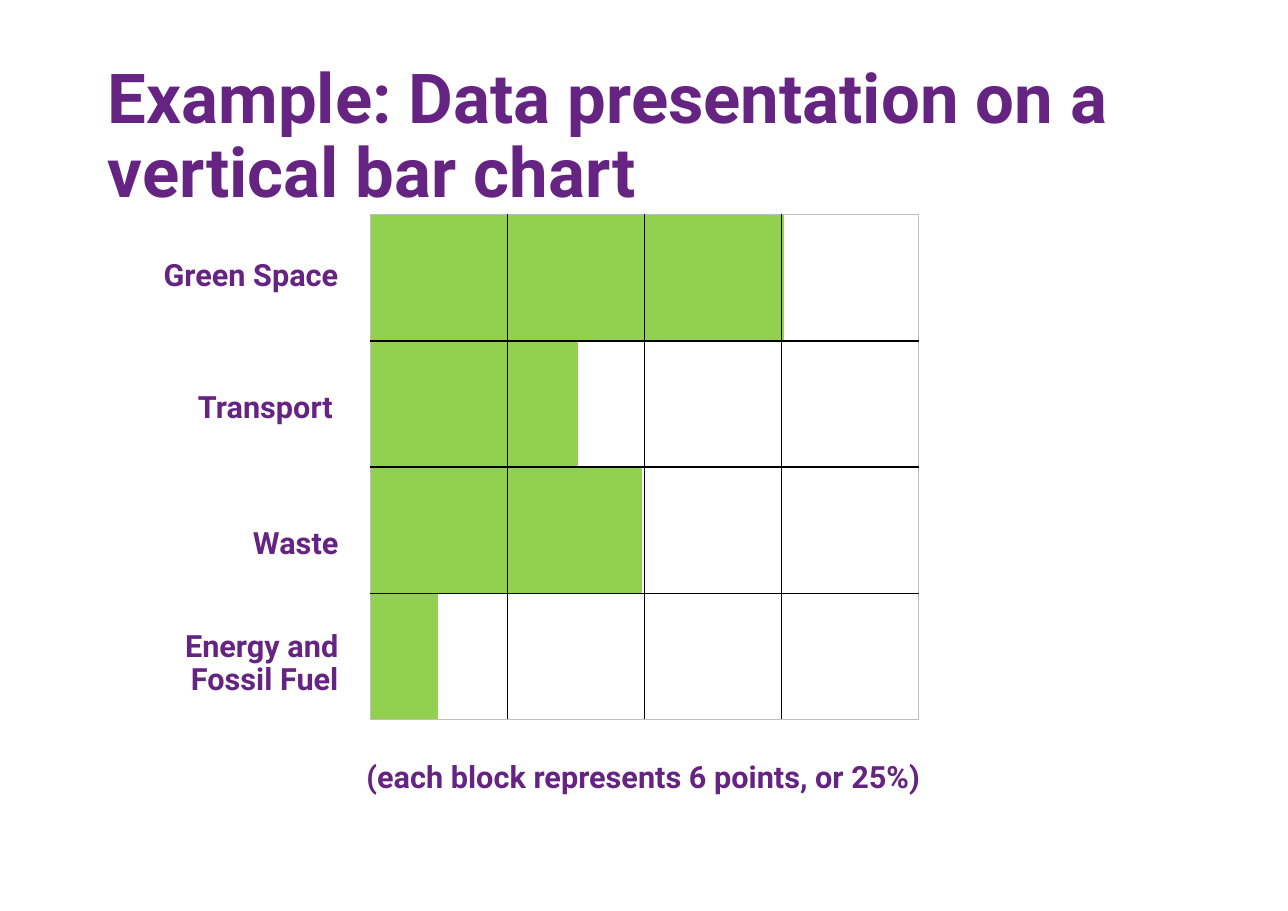
from lxml.etree import SubElement
from pptx import Presentation
from pptx.dml.color import RGBColor
from pptx.enum.shapes import MSO_SHAPE as Shape
from pptx.enum.text import MSO_ANCHOR as Anchor, PP_ALIGN as Align
from pptx.oxml.ns import qn
from pptx.util import Inches, Pt

COLORS = {"purple": "662482", "green": "92D050", "grid": "000000", "frame": "BFBFBF"}
FONT = "Roboto"
GRID_LEFT, GRID_TOP = 3.36, 1.95
BLOCK_WIDTH, ROW_HEIGHT, BLOCKS = 1.245, 1.145, 4
CATEGORIES = [
    ("Green Space", 3.74, (1.28, 2.27, 1.89, 0.44)),
    ("Transport", 1.87, (1.27, 3.47, 1.85, 0.44)),
    ("Waste", 2.45, (1.28, 4.7, 1.89, 0.44)),
    ("Energy and Fossil Fuel", 0.6, (1.28, 5.94, 1.89, 0.44)),
]


def color(name):
    """Return a palette colour."""
    return RGBColor.from_string(COLORS[name])


def write_text(box, text, size, align):
    """Write one bold purple paragraph that rests on the bottom of a box."""
    frame = box.text_frame
    frame.word_wrap = True
    frame.vertical_anchor = Anchor.BOTTOM
    para = frame.paragraphs[0]
    para.alignment = align
    para.line_spacing = 0.9
    para.space_before = Pt(0)
    span = para.add_run()
    span.text = text
    span.font.name = FONT
    span.font.size = Pt(size)
    span.font.bold = True
    span.font.color.rgb = color("purple")


def add_title(page, text):
    """Place and fill the title placeholder."""
    title = page.shapes.title
    title.left, title.top = Inches(0.88), Inches(1.06)
    title.width, title.height = Inches(9.94), Inches(0.92)
    write_text(title, text, 45, Align.LEFT)


def add_label(page, text, place, align):
    """Add a 20 point label."""
    box = page.shapes.add_textbox(*map(Inches, place))
    write_text(box, text, 20, align)


def add_bar(page, row, width):
    """Add the green bar of one row."""
    top = GRID_TOP + row * ROW_HEIGHT
    place = map(Inches, (GRID_LEFT + 0.01, top, width, ROW_HEIGHT))
    bar = page.shapes.add_shape(Shape.RECTANGLE, *place)
    bar.shadow.inherit = False
    bar.fill.solid()
    bar.fill.fore_color.rgb = color("green")
    bar.line.color.rgb = color("green")
    bar.line.width = Pt(1)


def set_border(cell, side, name):
    """Draw one side of a cell."""
    properties = cell._tc.get_or_add_tcPr()
    line = SubElement(properties, qn(f"a:ln{side}"), w=str(Pt(1)))
    fill = SubElement(line, qn("a:solidFill"))
    SubElement(fill, qn("a:srgbClr"), val=COLORS[name])


def add_grid(page):
    """Add the transparent block grid with a pale outer frame."""
    rows = len(CATEGORIES)
    size = (GRID_LEFT, GRID_TOP, BLOCKS * BLOCK_WIDTH, rows * ROW_HEIGHT)
    table = page.shapes.add_table(rows, BLOCKS, *map(Inches, size)).table
    table.first_row = False
    table.horz_banding = False
    for row in range(rows):
        for column in range(BLOCKS):
            cell = table.cell(row, column)
            outer = {"L": column == 0, "R": column == BLOCKS - 1,
                     "T": row == 0, "B": row == rows - 1}
            for side, is_outer in outer.items():
                set_border(cell, side, "frame" if is_outer else "grid")
            cell.fill.background()


def main():
    """Build and save the slide."""
    deck = Presentation()
    deck.slide_width, deck.slide_height = Inches(11.69), Inches(8.27)
    page = deck.slides.add_slide(deck.slide_layouts[5])
    for row, (_, width, _) in enumerate(CATEGORIES):
        add_bar(page, row, width)
    add_title(page, "Example: Data presentation on a vertical bar chart")
    add_grid(page)
    for name, _, place in CATEGORIES:
        add_label(page, name, place, Align.RIGHT)
    add_label(page, "(each block represents 6 points, or 25%)",
              (3, 6.83, 5.68, 0.44), Align.CENTER)
    deck.save("out.pptx")


if __name__ == "__main__":
    main()
